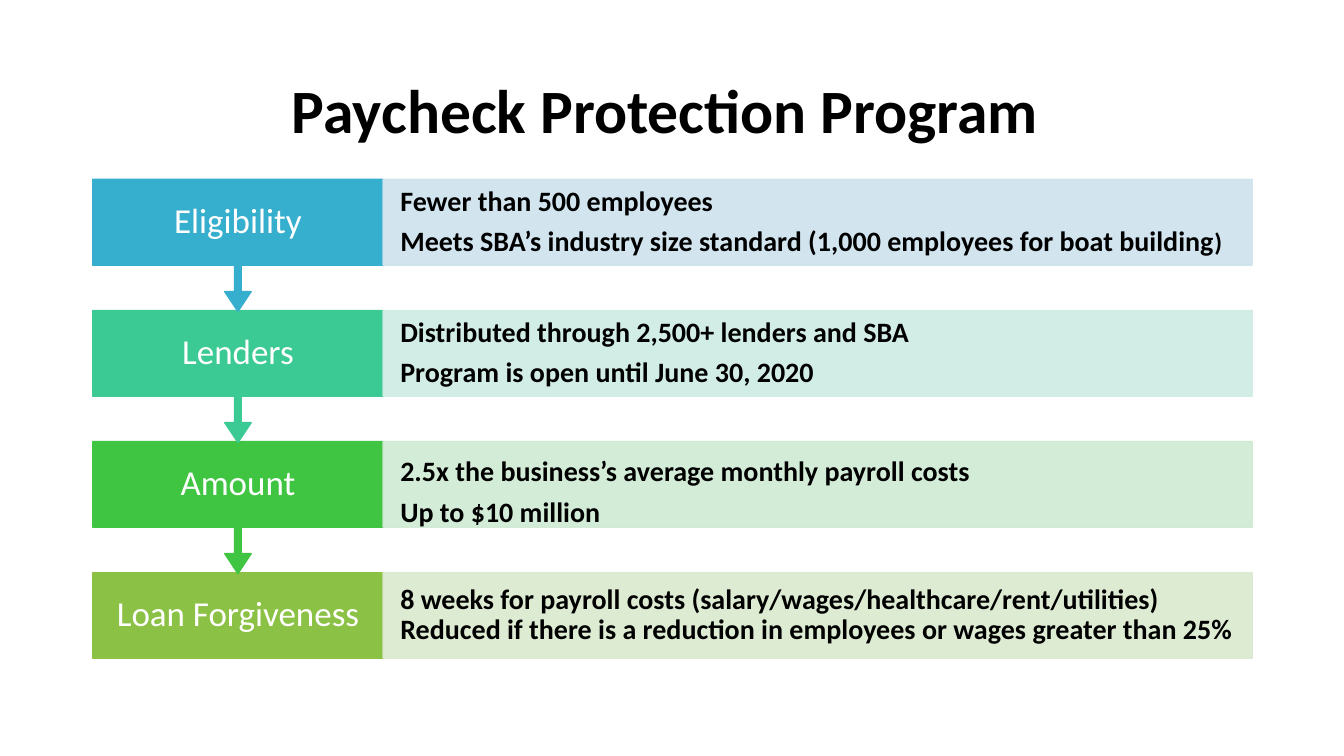
from lxml.etree import SubElement
from pptx import Presentation
from pptx.dml.color import RGBColor
from pptx.enum.shapes import MSO_SHAPE
from pptx.enum.text import MSO_ANCHOR, MSO_AUTO_SIZE, PP_ALIGN
from pptx.oxml.ns import qn
from pptx.util import Inches, Pt

COLORS = {
    "black": "000000", "white": "FFFFFF",
    "blue": "36AFCE", "pale blue": "CEE3ED",
    "teal": "3BCA93", "pale teal": "CEECE4",
    "green": "40C543", "pale green": "CFEAD3",
    "olive": "8BC145", "pale olive": "DAE9CF",
}
ROWS = [
    ("Eligibility", "blue", [
        [("Fewer than 500 employees", 20)],
        [("Meets SBA’s industry size standard (1,000 employees for boat building", 20), (")", 18)],
    ]),
    ("Lenders", "teal", [
        [("Distributed through 2,500+ lenders and SBA", 20)],
        [("Program is open until June 30, 2020", 20)],
    ]),
    ("Amount", "green", [
        [("2.5x the business’s average monthly payroll costs", 20)],
        [("Up to $10 million", 20)],
    ]),
    ("Loan Forgiveness", "olive", [
        [("8 weeks for payroll costs (salary/wages/healthcare/rent/utilities) "
          "Reduced if there is a reduction in employees or wages greater than 25%", 20)],
    ]),
]
LEFT, TOP, STEP = 0.92, 1.78, 1.3
LABEL_W, BODY_W, ROW_H, CALLOUT_H = 2.88, 8.62, 0.85, 1.31


def write(sp, paragraphs, color="black", bold=True, align=PP_ALIGN.LEFT,
          after=0, margins=(0.1, 0.05, 0.1, 0.05)):
    tf = sp.text_frame
    tf.word_wrap = True
    tf.auto_size = MSO_AUTO_SIZE.NONE
    tf.vertical_anchor = MSO_ANCHOR.MIDDLE
    tf.margin_left, tf.margin_top, tf.margin_right, tf.margin_bottom = map(Inches, margins)
    for i, runs in enumerate(paragraphs):
        p = tf.add_paragraph() if i else tf.paragraphs[0]
        p.alignment = align
        p.line_spacing = 0.9
        p.space_before = Pt(0)
        p.space_after = Pt(after)
        for text, size in runs:
            r = p.add_run()
            r.text = text
            r.font.name = "Calibri"
            r.font.size = Pt(size)
            r.font.bold = bold
            r.font.color.rgb = RGBColor.from_string(COLORS[color])


def add_block(kind, left, top, width, height, color, alpha=100):
    sp = s.shapes.add_shape(kind, Inches(left), Inches(top), Inches(width), Inches(height))
    sp.shadow.inherit = False
    sp.line.width = Pt(1)
    for fill in (sp.fill, sp.line.fill):
        fill.solid()
        fill.fore_color.rgb = RGBColor.from_string(COLORS[color])
    if alpha < 100:
        for clr in sp.element.spPr.iter(qn("a:srgbClr")):
            SubElement(clr, qn("a:alpha"), val=str(alpha * 1000))
    return sp


prs = Presentation()
prs.slide_width, prs.slide_height = Inches(13.33), Inches(7.5)
s = prs.slides.add_slide(prs.slide_layouts[5])

title = s.shapes.title
title.left, title.top, title.width, title.height = map(Inches, (LEFT, 0.4, 11.5, 1.45))
write(title, [[("Paycheck Protection Program ", 44)]], align=PP_ALIGN.CENTER)

for i, (label, color, details) in reversed(list(enumerate(ROWS))):
    top = TOP + i * STEP
    if i < len(ROWS) - 1:
        sp = add_block(MSO_SHAPE.DOWN_ARROW_CALLOUT, LEFT, top, LABEL_W, CALLOUT_H, color)
        for n, value in enumerate((0.05, 0.1, 0.15, 0.65)):
            sp.adjustments[n] = value
    else:
        sp = add_block(MSO_SHAPE.RECTANGLE, LEFT, top, LABEL_W, ROW_H, color)
    write(sp, [[(label, 25)]], color="white", bold=False, align=PP_ALIGN.CENTER,
          margins=(0.2, 0.19, 0.2, 0.19))

    sp = add_block(MSO_SHAPE.RECTANGLE, LEFT + LABEL_W, top, BODY_W, ROW_H,
                   f"pale {color}", alpha=90)
    margins = (0.17, 0.17, 0.17, 0) if label == "Amount" else (0.17, 0.05, 0.17, 0.05)
    write(sp, details, after=7, margins=margins)

prs.save("out.pptx")
